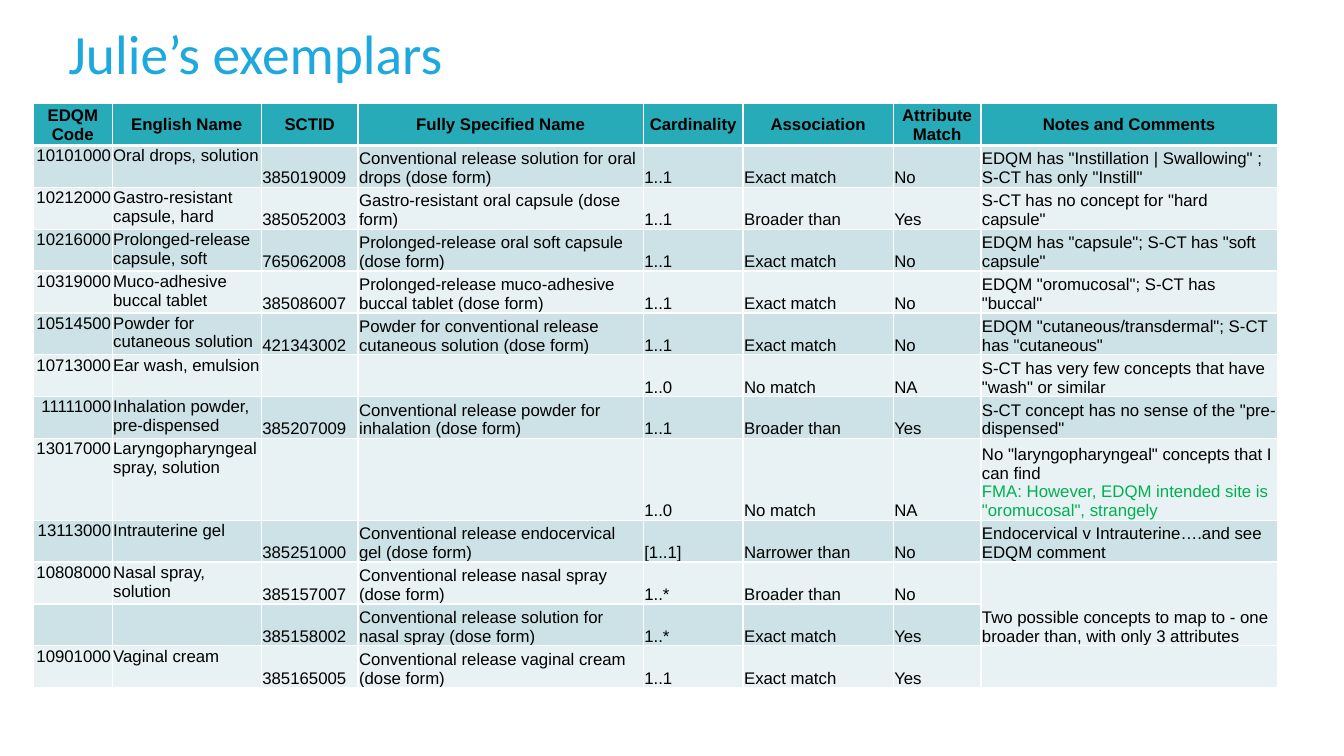
from copy import deepcopy

from lxml.etree import SubElement
from pptx import Presentation
from pptx.dml.color import RGBColor
from pptx.enum.text import MSO_ANCHOR, PP_ALIGN
from pptx.oxml.ns import qn
from pptx.util import Inches, Pt

SLIDE_WIDTH = Inches(13.33)
SLIDE_HEIGHT = Inches(7.5)

TITLE_BLUE = RGBColor(0x1D, 0xA8, 0xDE)
HEADER_TEAL = RGBColor(0x27, 0xAB, 0xB8)
BAND_DARK = RGBColor(0xCD, 0xE2, 0xE6)
BAND_LIGHT = RGBColor(0xE8, 0xF1, 0xF3)
BLACK = RGBColor(0x00, 0x00, 0x00)
WHITE = RGBColor(0xFF, 0xFF, 0xFF)
REMARK_GREEN = RGBColor(0x00, 0xB0, 0x50)

COLUMN_WEIGHTS = [0.78, 1.48, 0.96, 2.83, 0.99, 1.49, 0.87, 2.94]
CODE_COLUMN, NAME_COLUMN, NOTES_COLUMN = 0, 1, 7
SPRAY_ROW = 10

HEADINGS = ["EDQM Code", "English Name", "SCTID", "Fully Specified Name",
            "Cardinality", "Association", "Attribute Match", "Notes and Comments"]
EXEMPLARS = [
    ["10101000", "Oral drops, solution", "385019009",
     "Conventional release solution for oral drops (dose form)",
     "1..1", "Exact match", "No",
     'EDQM has "Instillation | Swallowing" ; S-CT has only "Instill"'],
    ["10212000", "Gastro-resistant capsule, hard", "385052003",
     "Gastro-resistant oral capsule (dose form)",
     "1..1", "Broader than", "Yes", 'S-CT has no concept for "hard capsule"'],
    ["10216000", "Prolonged-release capsule, soft", "765062008",
     "Prolonged-release oral soft capsule (dose form)",
     "1..1", "Exact match", "No", 'EDQM has "capsule"; S-CT has "soft capsule"'],
    ["10319000", "Muco-adhesive buccal tablet", "385086007",
     "Prolonged-release muco-adhesive buccal tablet (dose form)",
     "1..1", "Exact match", "No", 'EDQM "oromucosal"; S-CT has "buccal"'],
    ["10514500", "Powder for cutaneous solution", "421343002",
     "Powder for conventional release cutaneous solution (dose form)",
     "1..1", "Exact match", "No",
     'EDQM "cutaneous/transdermal"; S-CT has "cutaneous"'],
    ["10713000", "Ear wash, emulsion", "", "", "1..0", "No match", "NA",
     'S-CT has very few concepts that have "wash" or similar'],
    ["11111000", "Inhalation powder, pre-dispensed", "385207009",
     "Conventional release powder for inhalation (dose form)",
     "1..1", "Broader than", "Yes",
     'S-CT concept has no sense of the "pre-dispensed"'],
    ["13017000", "Laryngopharyngeal spray, solution", "", "",
     "1..0", "No match", "NA",
     'No "laryngopharyngeal" concepts that I can find\v'
     'FMA: However, EDQM intended site is "oromucosal", strangely'],
    ["13113000", "Intrauterine gel", "385251000",
     "Conventional release endocervical gel (dose form)",
     "[1..1]", "Narrower than", "No",
     "Endocervical v Intrauterine….and see EDQM comment"],
    ["10808000", "Nasal spray, solution", "385157007",
     "Conventional release nasal spray (dose form)",
     "1..*", "Broader than", "No",
     "Two possible concepts to map to - one broader than, with only 3 attributes"],
    ["", "", "385158002",
     "Conventional release solution for nasal spray (dose form)",
     "1..*", "Exact match", "Yes", ""],
    ["10901000", "Vaginal cream", "385165005",
     "Conventional release vaginal cream (dose form)",
     "1..1", "Exact match", "Yes", ""],
]


def across(share):
    return round(SLIDE_WIDTH * share)


def down(share):
    return round(SLIDE_HEIGHT * share)


def style_run(run, font_name, size, color, bold=False):
    run.font.name = font_name
    run.font.size = Pt(size)
    run.font.bold = bold
    run.font.color.rgb = color


def add_title(slide, wording):
    title = slide.shapes.add_textbox(across(0.0435), down(0.03), across(0.863), down(0.09))
    frame = title.text_frame
    frame.word_wrap = True
    frame.vertical_anchor = MSO_ANCHOR.MIDDLE
    frame.text = wording
    heading = frame.paragraphs[0]
    heading.line_spacing = 0.9
    style_run(heading.runs[0], "Calibri", 39.6, TITLE_BLUE)


def set_borders(cell, top, bottom):
    properties = cell._tc.get_or_add_tcPr()
    for side, width in (("L", 1), ("R", 1), ("T", top), ("B", bottom)):
        border = SubElement(properties, qn(f"a:ln{side}"), w=str(Pt(width)))
        fill = SubElement(border, qn("a:solidFill"))
        SubElement(fill, qn("a:srgbClr"), val=str(WHITE))


def fill_cell(cell, wording, color, anchor, alignment, bold):
    cell.fill.solid()
    cell.fill.fore_color.rgb = color
    cell.margin_left = cell.margin_right = cell.margin_top = Inches(0.01)
    cell.margin_bottom = 0
    cell.vertical_anchor = anchor
    paragraph = cell.text_frame.paragraphs[0]
    paragraph.text = wording
    paragraph.alignment = alignment
    for order, run in enumerate(paragraph.runs):
        style_run(run, "Arial", 12, REMARK_GREEN if order else BLACK, bold)
    for line_break in paragraph._p.findall(qn("a:br")):
        line_break.insert(0, deepcopy(paragraph.runs[0].font._element))


def cell_layout(row, column):
    if row == 0:
        return HEADER_TEAL, MSO_ANCHOR.MIDDLE, PP_ALIGN.CENTER, True
    color = BAND_DARK if row % 2 else BAND_LIGHT
    anchor = MSO_ANCHOR.TOP if column <= NAME_COLUMN else MSO_ANCHOR.BOTTOM
    alignment = PP_ALIGN.RIGHT if column == CODE_COLUMN else PP_ALIGN.LEFT
    return color, anchor, alignment, False


def add_mapping_table(slide, rows):
    width = across(0.9255)
    table = slide.shapes.add_table(
        len(rows), len(COLUMN_WEIGHTS),
        across(0.025), down(0.137), width, down(0.72)).table
    for column, weight in zip(table.columns, COLUMN_WEIGHTS):
        column.width = round(width * weight / sum(COLUMN_WEIGHTS))
    for row, wordings in enumerate(rows):
        for column, wording in enumerate(wordings):
            cell = table.cell(row, column)
            set_borders(cell, 3 if row == 1 else 1, 3 if row == 0 else 1)
            fill_cell(cell, wording, *cell_layout(row, column))
    table.cell(SPRAY_ROW, NOTES_COLUMN).merge(table.cell(SPRAY_ROW + 1, NOTES_COLUMN))


def main():
    deck = Presentation()
    deck.slide_width = SLIDE_WIDTH
    deck.slide_height = SLIDE_HEIGHT
    slide = deck.slides.add_slide(deck.slide_layouts[6])
    add_title(slide, "Julie’s exemplars")
    add_mapping_table(slide, [HEADINGS] + EXEMPLARS)
    deck.save("out.pptx")


if __name__ == "__main__":
    main()
